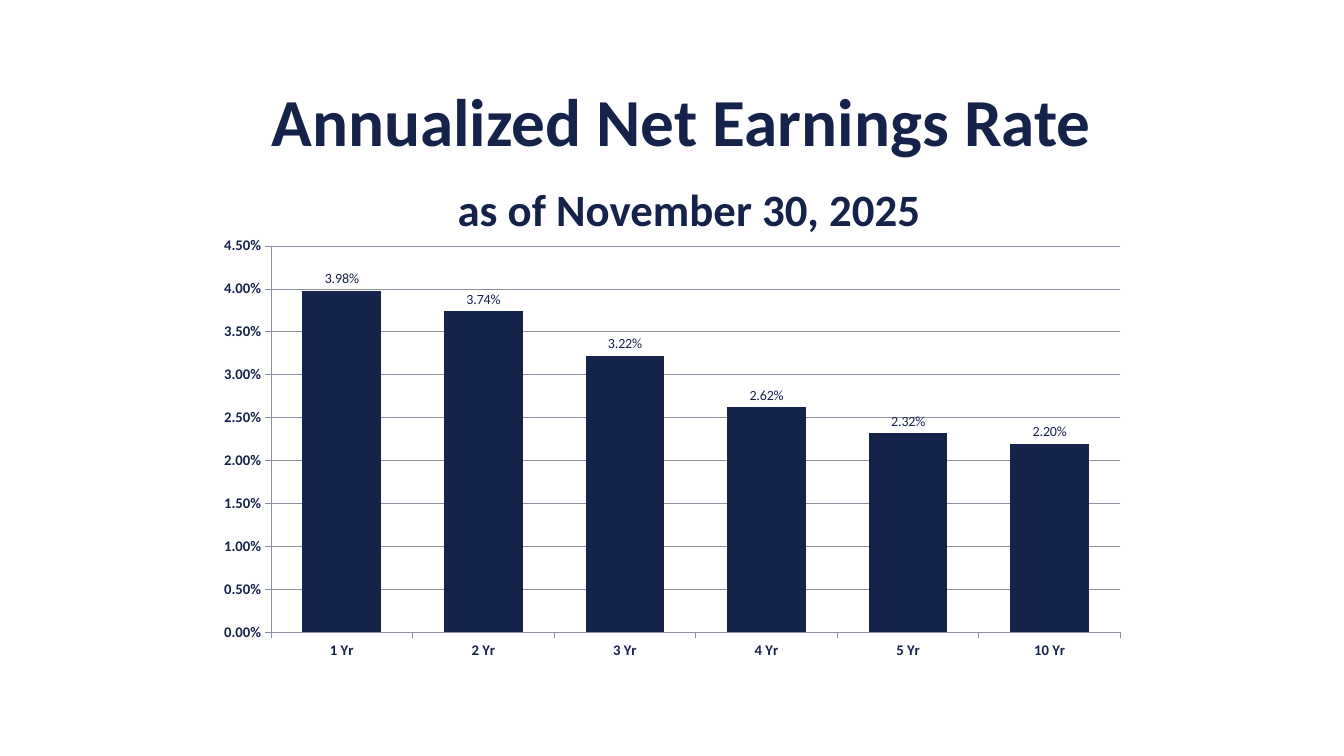
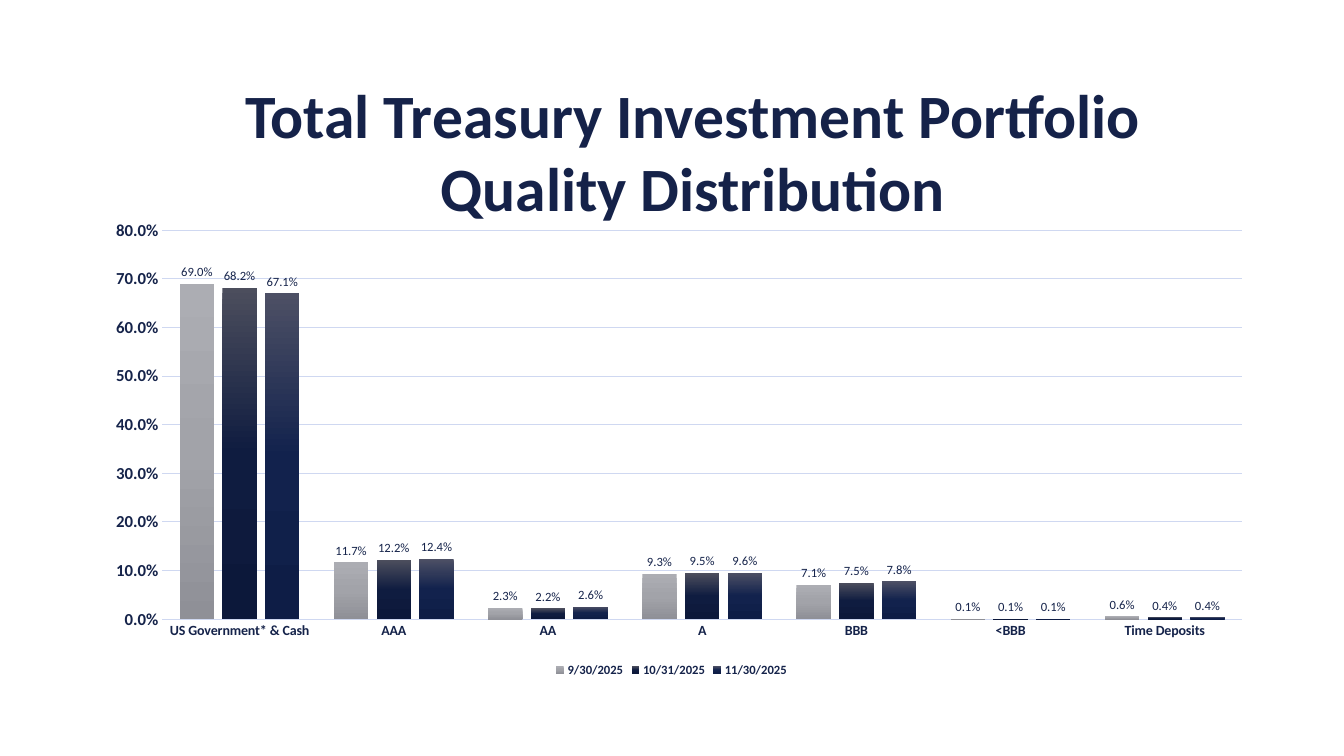
"""Build two treasury report slides, each a centred title above a column chart."""
from copy import deepcopy

from lxml.etree import SubElement
from pptx import Presentation
from pptx.chart.data import CategoryChartData
from pptx.dml.color import RGBColor
from pptx.enum.chart import XL_CHART_TYPE, XL_LABEL_POSITION, XL_LEGEND_POSITION, XL_TICK_MARK
from pptx.enum.text import MSO_AUTO_SIZE, PP_ALIGN
from pptx.oxml.ns import qn
from pptx.util import Inches, Pt

FONT = "Calibri"
TITLE_COLOR = "152249"
CHART_COLOR = "15234A"

SLIDES = [
    {
        "title_box": (2.38, 0.74, 8.76, 1.72),
        "title": [
            {"text": "Annualized Net Earnings Rate", "size": 48, "before": 0, "indent": 0},
            {"text": "as of November 30, 2025", "size": 32, "before": 15, "indent": 10.8},
        ],
        "chart_box": (2.1, 2.3, 9.05, 4.6),
        "plot": (0.065, 0.031, 0.931, 0.833),
        "categories": ["1 Yr", "2 Yr", "3 Yr", "4 Yr", "5 Yr", "10 Yr"],
        "series": [
            ("Series 1", [0.0398, 0.0374, 0.0322, 0.0262, 0.0232, 0.022], [CHART_COLOR]),
        ],
        "format": "0.00%",
        "scale": (0.045, 0.005),
        "gap": 80,
        "overlap": 0,
        "sizes": {"category": 10.5, "value": 10.5, "label": 10},
        "tick": XL_TICK_MARK.OUTSIDE,
        "lines": {"category": ("8A8E9F", 0.75), "value": ("8A8E9F", 0.75), "grid": ("8A8E9F", 0.75)},
        "legend": False,
    },
    {
        "title_box": (1.42, 0.71, 10.91, 1.58),
        "title": [
            {"text": "Total Treasury Investment Portfolio", "size": 44, "before": 0, "indent": 0},
            {"text": "Quality Distribution", "size": 44, "before": 0, "indent": 0},
        ],
        "chart_box": (0.91, 2.1, 11.5, 4.66),
        "plot": (0.061, 0.04, 0.931, 0.828),
        "categories": ["US Government* & Cash", "AAA", "AA", "A", "BBB", "<BBB", "Time Deposits"],
        "series": [
            ("9/30/2025", [0.69, 0.117, 0.023, 0.093, 0.071, 0.001, 0.006], ["ACADB3", "A2A3A9", "8F9097"]),
            ("10/31/2025", [0.682, 0.122, 0.022, 0.095, 0.075, 0.001, 0.004], ["4C4E5D", "0F1C40", "0C183A"]),
            ("11/30/2025", [0.671, 0.124, 0.026, 0.096, 0.078, 0.001, 0.004], ["4D5065", "12224D", "0E1D46"]),
        ],
        "format": "0.0%",
        "scale": (0.8, 0.1),
        "gap": 100,
        "overlap": -24,
        "sizes": {"category": 10, "value": 12, "label": 9},
        "tick": XL_TICK_MARK.NONE,
        "lines": {"category": ("CFD8F1", 1), "value": None, "grid": ("CFD8F1", 0.75)},
        "legend": True,
    },
]


def color(value):
    return RGBColor.from_string(value)


def style_font(font, size, value=CHART_COLOR, bold=True):
    font.name, font.size, font.bold = FONT, Pt(size), bold
    font.color.rgb = color(value)


def style_line(line, appearance):
    if appearance is None:
        line.fill.background()
        return
    line.color.rgb = color(appearance[0])
    line.width = Pt(appearance[1])


def add_title(slide, box, lines):
    frame = slide.shapes.add_textbox(*map(Inches, box)).text_frame
    frame.word_wrap = True
    frame.auto_size = MSO_AUTO_SIZE.SHAPE_TO_FIT_TEXT
    frame.text = "\n".join(line["text"] for line in lines)
    for paragraph, line in zip(frame.paragraphs, lines):
        paragraph.alignment = PP_ALIGN.CENTER
        if line["before"]:
            paragraph.space_before = Pt(line["before"])
        if line["indent"]:
            paragraph._p.get_or_add_pPr().set("marL", str(Pt(line["indent"])))
        style_font(paragraph.runs[0].font, line["size"], TITLE_COLOR)


def fill_series(series, colors):
    fill = series.format.fill
    if len(colors) == 1:
        fill.solid()
        fill.fore_color.rgb = color(colors[0])
        return
    fill.gradient()
    fill.gradient_angle = 270
    stops = series._element.find(".//" + qn("a:gsLst"))
    while len(stops) < len(colors):
        stops.insert(1, deepcopy(stops[0]))
    for index, stop in enumerate(fill.gradient_stops):
        stop.position = index / (len(colors) - 1)
        stop.color.rgb = color(colors[index])


def place_plot(chart, shares):
    area = chart._chartSpace.find(".//" + qn("c:plotArea"))
    for old in area.findall(qn("c:layout")):
        area.remove(old)
    layout = SubElement(area, qn("c:layout"))
    area.insert(0, layout)
    manual = SubElement(layout, qn("c:manualLayout"))
    settings = [("layoutTarget", "inner"), ("xMode", "edge"), ("yMode", "edge"), *zip("xywh", shares)]
    for name, value in settings:
        SubElement(manual, qn("c:" + name)).set("val", str(value))


def add_column_chart(slide, content):
    data = CategoryChartData(number_format=content["format"])
    data.categories = content["categories"]
    for name, values, _ in content["series"]:
        data.add_series(name, values)
    frame = slide.shapes.add_chart(
        XL_CHART_TYPE.COLUMN_CLUSTERED, *map(Inches, content["chart_box"]), data)
    chart = frame.chart
    sizes, lines = content["sizes"], content["lines"]
    style_font(chart.font, sizes["value"])
    chart.has_title = False
    chart.has_legend = content["legend"]
    if chart.has_legend:
        chart.legend.position = XL_LEGEND_POSITION.BOTTOM
        chart.legend.include_in_layout = False
        style_font(chart.legend.font, 9)

    for name, axis in (("category", chart.category_axis), ("value", chart.value_axis)):
        style_font(axis.tick_labels.font, sizes[name])
        axis.major_tick_mark = content["tick"]
        axis.minor_tick_mark = XL_TICK_MARK.NONE
        style_line(axis.format.line, lines[name])
    axis = chart.value_axis
    axis.minimum_scale = 0
    axis.maximum_scale, axis.major_unit = content["scale"]
    axis.has_major_gridlines = True
    style_line(axis.major_gridlines.format.line, lines["grid"])

    plot = chart.plots[0]
    plot.gap_width, plot.overlap = content["gap"], content["overlap"]
    plot.vary_by_categories = False
    plot.has_data_labels = True
    labels = plot.data_labels
    labels.show_value = True
    labels.position = XL_LABEL_POSITION.OUTSIDE_END
    style_font(labels.font, sizes["label"], bold=False)
    for numbers in (axis.tick_labels, labels):
        numbers.number_format = content["format"]
        numbers.number_format_is_linked = False
    for series, (_, _, colors) in zip(plot.series, content["series"]):
        fill_series(series, colors)
    place_plot(chart, content["plot"])


def main():
    presentation = Presentation()
    presentation.slide_width, presentation.slide_height = Inches(13.33), Inches(7.5)
    for content in SLIDES:
        slide = presentation.slides.add_slide(presentation.slide_layouts[6])
        add_title(slide, content["title_box"], content["title"])
        add_column_chart(slide, content)
    presentation.save("out.pptx")


if __name__ == "__main__":
    main()
